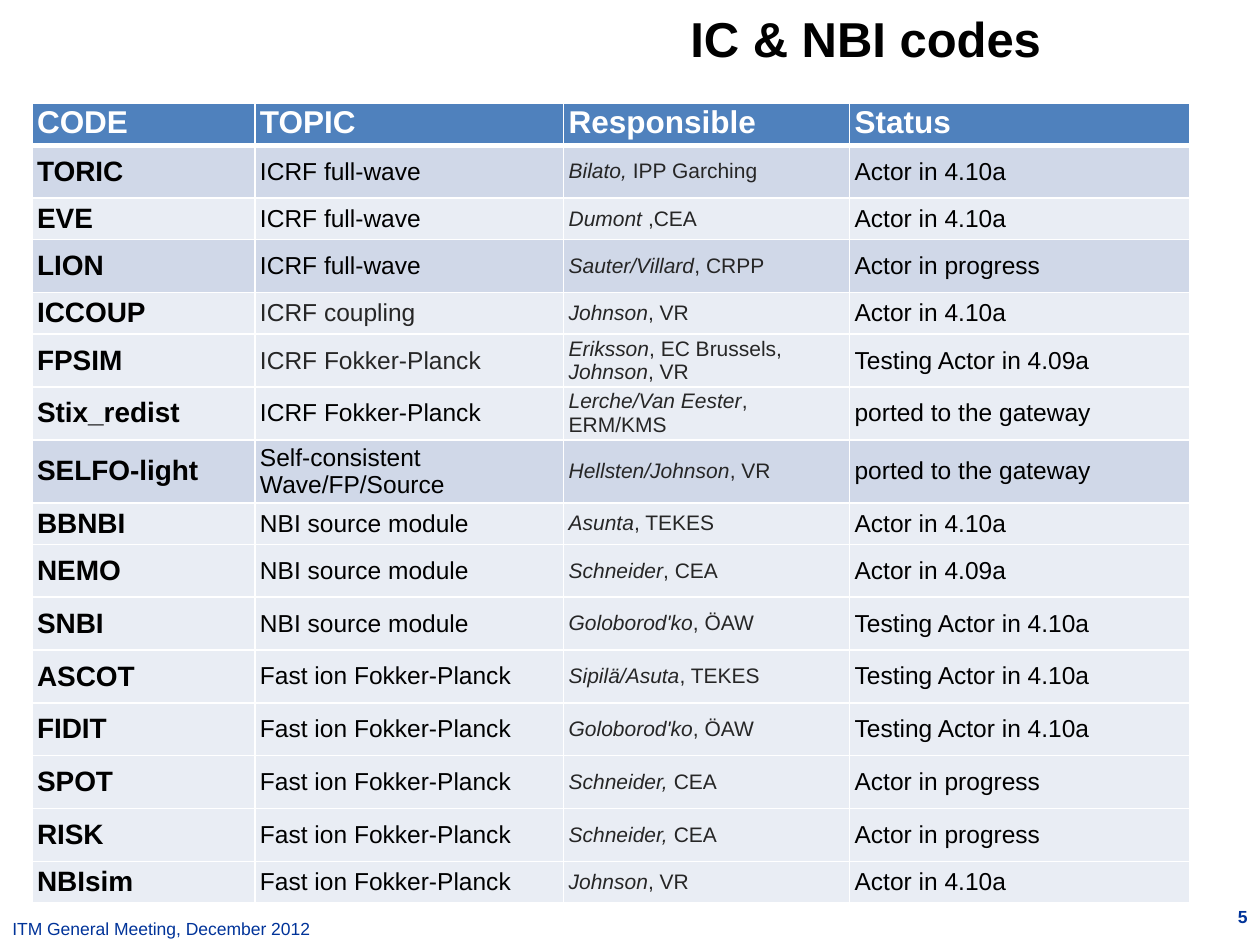
from lxml import etree
from pptx import Presentation
from pptx.dml.color import RGBColor
from pptx.enum import text
from pptx.oxml import ns
from pptx.util import Pt

FONT = "Arial"
BLACK = RGBColor(0x00, 0x00, 0x00)
WHITE = RGBColor(0xFF, 0xFF, 0xFF)
CHARCOAL = RGBColor(0x26, 0x26, 0x26)
NAVY = RGBColor(0x00, 0x33, 0x99)
HEADER_BLUE = RGBColor(0x4F, 0x81, 0xBD)
BAND_DARK = RGBColor(0xD0, 0xD8, 0xE8)
BAND_LIGHT = RGBColor(0xE9, 0xED, 0xF4)

SHORT, TALL, DOUBLE = 23.8, 30.2, 36
HEADINGS = ("CODE", "TOPIC", "Responsible", "Status")
COLUMN_WIDTHS = (127.4, 176.4, 163.4, 194.4)

# Code, topic, responsible (people and institutes alternate), status, row height
CODES = [
    ("TORIC", "ICRF full-wave", ("Bilato,", " IPP Garching"), "Actor in 4.10a", TALL),
    ("EVE", "ICRF full-wave", ("Dumont ", ",CEA"), "Actor in 4.10a", SHORT),
    ("LION", "ICRF full-wave", ("Sauter/Villard", ", CRPP"), "Actor in progress", TALL),
    ("ICCOUP", "ICRF coupling", ("Johnson", ", VR"), "Actor in 4.10a", SHORT),
    ("FPSIM", "ICRF Fokker-Planck", ("Eriksson", ", EC Brussels, ", "Johnson", ", VR"),
     "Testing Actor in 4.09a", SHORT),
    ("Stix_redist", "ICRF Fokker-Planck", ("Lerche/Van Eester", ", ERM/KMS"),
     "ported to the gateway", TALL),
    ("SELFO-light", "Self-consistent \vWave/FP/Source", ("Hellsten/Johnson", ", VR"),
     "ported to the gateway", DOUBLE),
    ("BBNBI", "NBI source module", ("Asunta", ", TEKES"), "Actor in 4.10a", SHORT),
    ("NEMO", "NBI source module", ("Schneider", ", CEA"), "Actor in 4.09a", TALL),
    ("SNBI", "NBI source module", ("Goloborod'ko", ", ÖAW"), "Testing Actor in 4.10a", TALL),
    ("ASCOT", "Fast ion Fokker-Planck", ("Sipilä/Asuta", ", TEKES"), "Testing Actor in 4.10a", TALL),
    ("FIDIT", "Fast ion Fokker-Planck", ("Goloborod'ko", ", ÖAW"), "Testing Actor in 4.10a", TALL),
    ("SPOT", "Fast ion Fokker-Planck", ("Schneider, ", "CEA"), "Actor in progress", TALL),
    ("RISK", "Fast ion Fokker-Planck", ("Schneider, ", "CEA"), "Actor in progress", TALL),
    ("NBIsim", "Fast ion Fokker-Planck", ("Johnson", ", VR"), "Actor in 4.10a", SHORT),
]
DARK_ROWS = {"TORIC", "LION", "SELFO-light"}
CHARCOAL_TOPICS = {"ICCOUP", "FPSIM"}


def format_runs(paragraph, size, color, bold=False):
    for run in paragraph.runs:
        run.font.name = FONT
        run.font.size = Pt(size)
        run.font.bold = bold
        run.font.color.rgb = color


def add_title(slide, left, top, width, height):
    title = slide.shapes.title
    title.left, title.top, title.width, title.height = map(Pt, (left, top, width, height))
    frame = title.text_frame
    frame.text = "IC & NBI codes"
    frame.auto_size = text.MSO_AUTO_SIZE.NONE
    frame.vertical_anchor = text.MSO_ANCHOR.MIDDLE
    frame.paragraphs[0].alignment = text.PP_ALIGN.CENTER
    format_runs(frame.paragraphs[0], 28, BLACK, bold=True)


def add_footer_text(slide, wording, box, alignment, bold=False):
    frame = slide.shapes.add_textbox(*map(Pt, box)).text_frame
    frame.word_wrap = True
    frame.text = wording
    frame.paragraphs[0].alignment = alignment
    format_runs(frame.paragraphs[0], 10, NAVY, bold)


def set_borders(cell, top=1, bottom=1):
    properties = cell._tc.get_or_add_tcPr()
    for side, width in (("L", 1), ("R", 1), ("T", top), ("B", bottom)):
        line = etree.SubElement(properties, ns.qn(f"a:ln{side}"), w=str(Pt(width)))
        fill = etree.SubElement(line, ns.qn("a:solidFill"))
        etree.SubElement(fill, ns.qn("a:srgbClr"), val=str(WHITE))


def fill_cell(cell, parts, size, color, background, bold=False):
    cell.fill.solid()
    cell.fill.fore_color.rgb = background
    cell.margin_left, cell.margin_right = Pt(3), Pt(0)
    cell.margin_top = cell.margin_bottom = Pt(0.7)
    paragraph = cell.text_frame.paragraphs[0]
    if isinstance(parts, str):
        paragraph.text = parts
    else:
        for index, part in enumerate(parts):
            run = paragraph.add_run()
            run.text = part
            run.font.italic = index % 2 == 0
    format_runs(paragraph, size, color, bold)


def add_code_table(slide, left, top):
    heights = [SHORT] + [code[-1] for code in CODES]
    table = slide.shapes.add_table(
        len(heights), len(HEADINGS),
        Pt(left), Pt(top), Pt(sum(COLUMN_WIDTHS)), Pt(sum(heights))).table
    table.horz_banding = False
    for column, width in zip(table.columns, COLUMN_WIDTHS):
        column.width = Pt(width)
    for row, height in zip(table.rows, heights):
        row.height = Pt(height)

    # Header row
    for cell, heading in zip(table.rows[0].cells, HEADINGS):
        set_borders(cell, bottom=3)
        fill_cell(cell, heading, 18, WHITE, HEADER_BLUE, bold=True)

    # One row for each code
    for number, (name, topic, responsible, status, _) in enumerate(CODES, start=1):
        cells = list(table.rows[number].cells)
        background = BAND_DARK if name in DARK_ROWS else BAND_LIGHT
        for cell in cells:
            set_borders(cell, top=3 if number == 1 else 1)
            cell.vertical_anchor = text.MSO_ANCHOR.MIDDLE
        topic_color = CHARCOAL if name in CHARCOAL_TOPICS else BLACK
        fill_cell(cells[0], name, 16, BLACK, background, bold=True)
        fill_cell(cells[1], topic, 14, topic_color, background)
        fill_cell(cells[2], responsible, 12, CHARCOAL, background)
        fill_cell(cells[3], status, 14, BLACK, background)


def main():
    presentation = Presentation()
    presentation.slide_width, presentation.slide_height = Pt(720), Pt(540)
    slide = presentation.slides.add_slide(presentation.slide_layouts[5])

    # Footer and page number
    add_footer_text(slide, "ITM General Meeting, December 2012",
                    (0, 521.3, 304.6, 18.7), text.PP_ALIGN.LEFT)
    add_footer_text(slide, "5", (660, 514, 60, 26), text.PP_ALIGN.RIGHT, bold=True)

    add_title(slide, 269.3, 0, 450.7, 43.2)
    add_code_table(slide, 18.2, 59.2)
    presentation.save("out.pptx")


if __name__ == "__main__":
    main()
